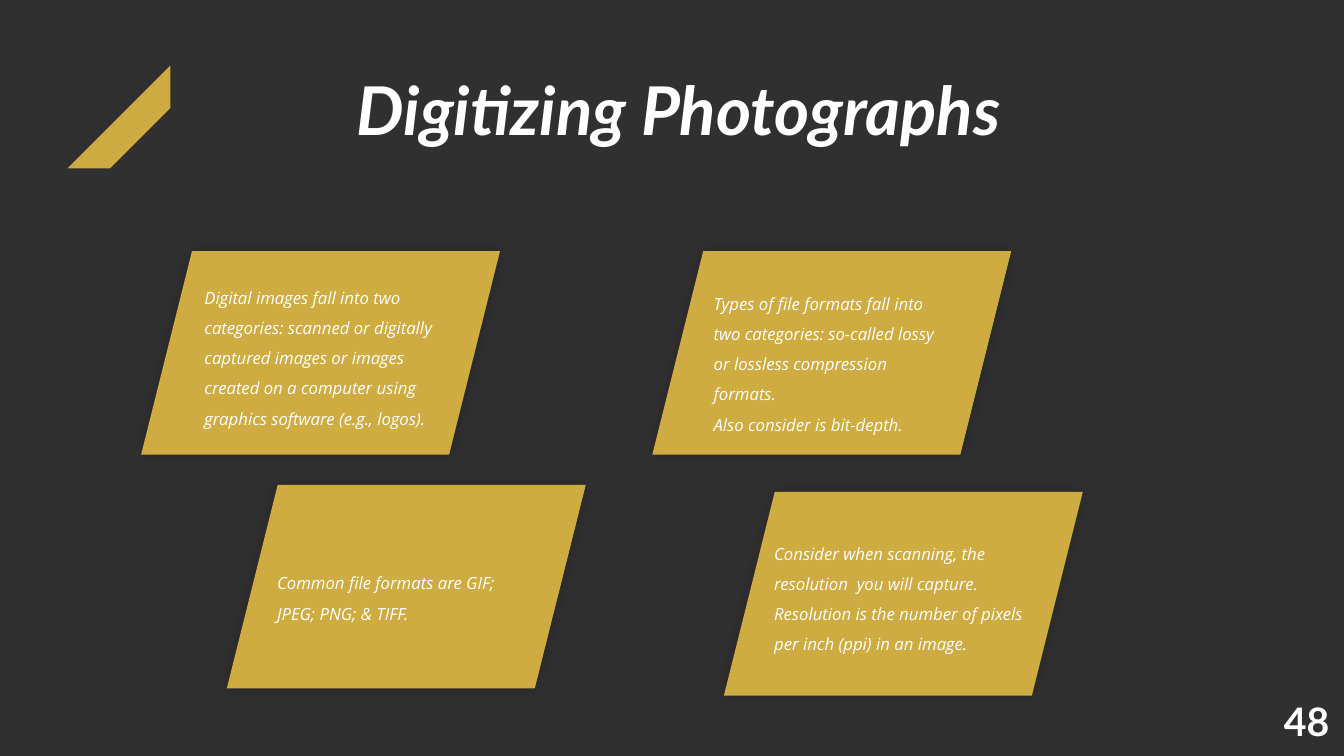
from dataclasses import dataclass

from lxml import etree
from pptx import Presentation
from pptx import util as u
from pptx.dml.color import RGBColor
from pptx.enum import shapes, text
from pptx.oxml import ns


@dataclass(frozen=True)
class Theme:
    background: RGBColor = RGBColor.from_string("303030")
    gold: RGBColor = RGBColor.from_string("CEAC41")
    white: RGBColor = RGBColor.from_string("FFFFFF")
    shadow: str = "000000"
    heading_font: str = "Lato"
    body_font: str = "Open Sans"
    title_size: int = 48
    number_size: int = 28
    body_size: int = 12


class SlideBuilder:
    def __init__(self, page, theme):
        self.page = page
        self.theme = theme
        fill = page.background.fill
        fill.solid()
        fill.fore_color.rgb = theme.background

    def shape(self, preset, left, top, width, height):
        shape = self.page.shapes.add_shape(
            preset, u.Inches(left), u.Inches(top), u.Inches(width), u.Inches(height))
        shape.shadow.inherit = False
        shape.fill.solid()
        shape.fill.fore_color.rgb = self.theme.gold
        shape.line.fill.background()
        return shape

    def corner_stripe(self, left, top, size):
        stripe = self.shape(shapes.MSO_SHAPE.DIAGONAL_STRIPE, left, top, size, size)
        stripe.adjustments[0] = 0.588
        stripe.rotation = 180

    def card(self, left, top):
        card = self.shape(shapes.MSO_SHAPE.PARALLELOGRAM, left, top, 3.56, 2.02)
        effects = card._element.spPr.find(ns.qn("a:effectLst"))
        shadow = etree.SubElement(effects, ns.qn("a:outerShdw"), blurRad=str(u.Pt(10)),
                                  dist="0", dir="0", algn="ctr", rotWithShape="0")
        color = etree.SubElement(shadow, ns.qn("a:srgbClr"), val=self.theme.shadow)
        etree.SubElement(color, ns.qn("a:alpha"), val="20000")

    def text(self, left, top, width, height, paragraphs, font, size, bold=False,
             italic=False, spacing=None, align=text.PP_ALIGN.LEFT, inset_top=0.05,
             inset_bottom=0.05):
        box = self.page.shapes.add_textbox(
            u.Inches(left), u.Inches(top), u.Inches(width), u.Inches(height))
        frame = box.text_frame
        frame.word_wrap = True
        frame.auto_size = text.MSO_AUTO_SIZE.SHAPE_TO_FIT_TEXT
        frame.vertical_anchor = text.MSO_ANCHOR.MIDDLE
        frame.margin_top = u.Inches(inset_top)
        frame.margin_bottom = u.Inches(inset_bottom)
        for index, words in enumerate(paragraphs):
            para = frame.add_paragraph() if index else frame.paragraphs[0]
            para.alignment = align
            para.line_spacing = spacing
            span = para.add_run()
            span.text = words
            span.font.name = font
            span.font.size = u.Pt(size)
            span.font.bold = bold
            span.font.italic = italic
            span.font.color.rgb = self.theme.white

    def title(self, words):
        self.text(3.44, 0.6, 10.86, 0.98, [words], self.theme.heading_font,
                  self.theme.title_size, bold=True, italic=True, spacing=0.9,
                  inset_top=0.16, inset_bottom=0.08)

    def page_number(self, number):
        self.text(12.44, 6.87, 1.04, 0.57, [number], self.theme.heading_font,
                  self.theme.number_size, bold=True, align=text.PP_ALIGN.CENTER)

    def card_text(self, place, paragraphs):
        self.text(*place, paragraphs, self.theme.body_font, self.theme.body_size,
                  italic=True, spacing=1.5)


CARDS = [
    ((1.4, 2.49), (1.93, 2.71, 2.76, 1.58),
     ["Digital images fall into two categories: scanned or digitally captured images "
      "or images created on a computer using graphics software (e.g., logos)."]),
    ((6.47, 2.49), (6.98, 2.77, 2.54, 1.58),
     ["Types of file formats fall into two categories: so-called lossy or lossless "
      "compression formats.",
      "Also consider is bit-depth."]),
    ((2.25, 4.81), (2.65, 5.55, 2.76, 0.67),
     ["Common file formats are GIF; JPEG; PNG; & TIFF."]),
    ((7.18, 4.88), (7.58, 5.25, 2.76, 1.28),
     ["Consider when scanning, the resolution  you will capture. Resolution is the "
      "number of pixels per inch (ppi) in an image."]),
]


def main():
    deck = Presentation()
    deck.slide_width = u.Inches(13.33)
    deck.slide_height = u.Inches(7.5)
    builder = SlideBuilder(deck.slides.add_slide(deck.slide_layouts[6]), Theme())
    builder.page_number("48")
    builder.corner_stripe(0.67, 0.65, 1.02)
    builder.title("Digitizing Photographs")
    for corner, place, paragraphs in CARDS:
        builder.card(*corner)
        builder.card_text(place, paragraphs)
    deck.save("out.pptx")


if __name__ == "__main__":
    main()
